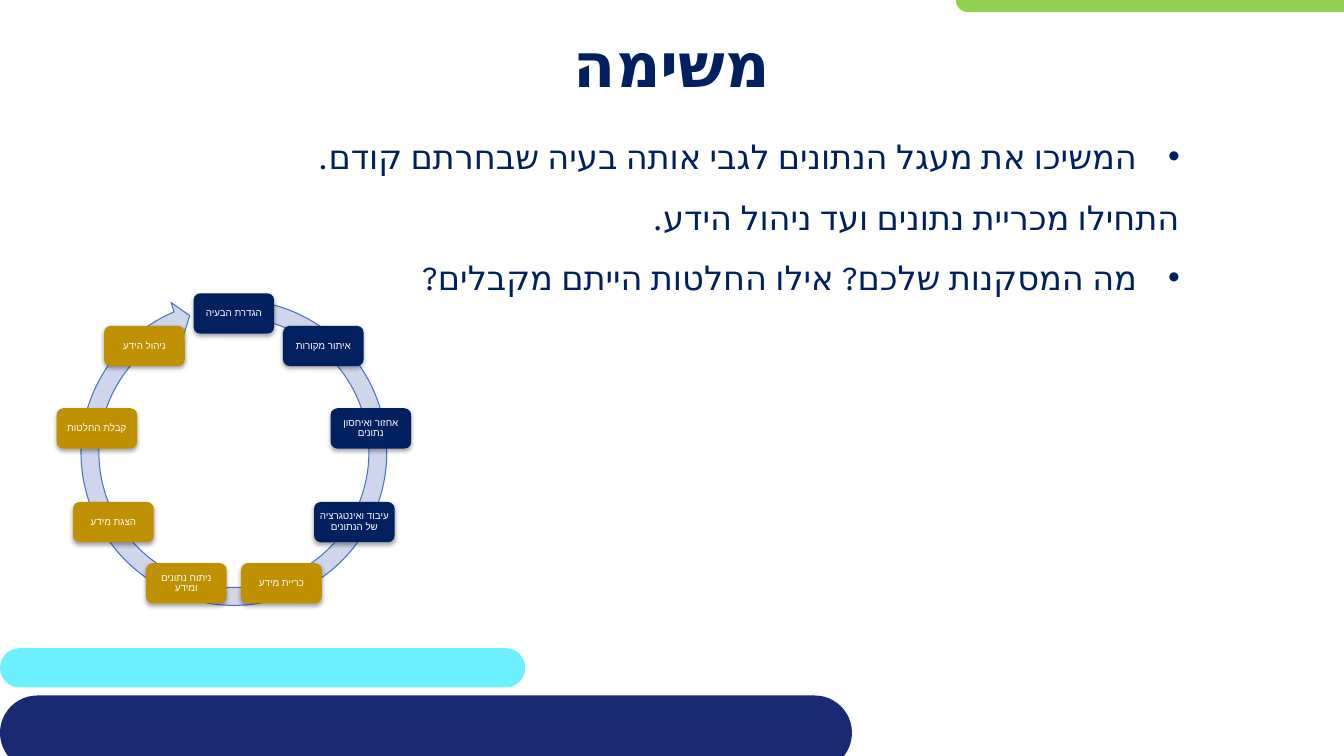
import math

import lxml.etree
import pptx
import pptx.dml.color
import pptx.enum.shapes
import pptx.enum.text
import pptx.oxml.ns
import pptx.util

Inches = pptx.util.Inches
Pt = pptx.util.Pt
SHAPE = pptx.enum.shapes.MSO_SHAPE
ALIGN = pptx.enum.text.PP_ALIGN
ANCHOR = pptx.enum.text.MSO_ANCHOR

NAVY = "002060"
GOLD = "BF9000"
WHITE = "FFFFFF"
HEADING_FONT = "League Spartan"

BARS = [
    (0, 6.43, 5.21, 0.39, "6CF0FF"),
    (9.48, -0.12, 5.8, 0.24, "92D050"),
    (0, 6.9, 8.45, 0.74, "192A72"),
]
BODY = [
    ("המשיכו את מעגל הנתונים לגבי אותה בעיה שבחרתם קודם.", True),
    ("התחילו מכריית נתונים ועד ניהול הידע.", False),
    ("מה המסקנות שלכם? אילו החלטות הייתם מקבלים?", True),
]
STAGES = [
    ("הגדרת הבעיה", NAVY),
    ("איתור מקורות", NAVY),
    ("אחזור ואיחסון נתונים", NAVY),
    ("עיבוד ואינטגרציה של הנתונים", NAVY),
    ("כריית מידע", GOLD),
    ("ניתוח נתונים ומידע", GOLD),
    ("הצגת מידע", GOLD),
    ("קבלת החלטות", GOLD),
    ("ניהול הידע", GOLD),
]
CENTER_X, CENTER_Y, RADIUS = 2.32, 4.49, 1.38
STAGE_WIDTH, STAGE_HEIGHT = 0.8, 0.4
ARROW_SIZE = 3.23


def rgb(color):
    return pptx.dml.color.RGBColor.from_string(color)


def add_child(parent, tag, **attributes):
    child = lxml.etree.SubElement(parent, pptx.oxml.ns.qn(tag))
    for name, value in attributes.items():
        child.set(name, str(value))
    return child


def add_filled_shape(shapes, kind, left, top, width, height, color):
    shape = shapes.add_shape(kind, Inches(left), Inches(top), Inches(width), Inches(height))
    shape.shadow.inherit = False
    shape.fill.solid()
    shape.fill.fore_color.rgb = rgb(color)
    shape.line.fill.background()
    return shape


def set_frame(shape, margin_x, margin_y, anchor):
    frame = shape.text_frame
    frame.word_wrap = True
    frame.margin_left = frame.margin_right = Inches(margin_x)
    frame.margin_top = frame.margin_bottom = Inches(margin_y)
    frame.vertical_anchor = anchor
    return frame


def add_text_box(slide, left, top, width, height, margin_x, margin_y, anchor):
    box = slide.shapes.add_textbox(Inches(left), Inches(top), Inches(width), Inches(height))
    return set_frame(box, margin_x, margin_y, anchor)


def write_hebrew(paragraph, text, size, font_name, color, alignment, bold=False):
    """Write one right-to-left run, naming the font for Hebrew letters too."""
    paragraph.alignment = alignment
    paragraph._p.get_or_add_pPr().set("rtl", "1")
    run = paragraph.add_run()
    run.text = text
    run.font.size = Pt(size)
    run.font.name = font_name
    run.font.bold = bold
    run.font.color.rgb = rgb(color)
    properties = run._r.get_or_add_rPr()
    properties.set("lang", "he-IL")
    add_child(properties, "a:cs", typeface=font_name)


def set_indent(paragraph, margin, indent):
    properties = paragraph._p.get_or_add_pPr()
    properties.set("marL", str(Inches(margin)))
    properties.set("indent", str(Inches(indent)))
    return properties


def add_bullet(properties, color):
    add_child(add_child(properties, "a:buClr"), "a:srgbClr", val=color)
    add_child(properties, "a:buFont", typeface="Arial")
    add_child(properties, "a:buChar", char="•")


def add_soft_shadow(shape):
    effects = shape._element.spPr.find(pptx.oxml.ns.qn("a:effectLst"))
    shadow = add_child(effects, "a:outerShdw", blurRad=Pt(3.1), dist=Pt(1.8),
                       dir=90 * 60000, rotWithShape=0)
    add_child(add_child(shadow, "a:srgbClr", val="000000"), "a:alpha", val=35000)


def add_title(slide, text):
    frame = add_text_box(slide, 0, 0.23, 13.33, 0.79, 0.04, 0, ANCHOR.MIDDLE)
    write_hebrew(frame.paragraphs[0], text, 44, HEADING_FONT, NAVY, ALIGN.CENTER, bold=True)


def add_body(slide):
    frame = add_text_box(slide, 0.56, 1.1, 11.32, 5.04, 0.1, 0.05, ANCHOR.TOP)
    for index, (text, bulleted) in enumerate(BODY):
        paragraph = frame.add_paragraph() if index else frame.paragraphs[0]
        if bulleted:
            add_bullet(set_indent(paragraph, 0.5, -0.42), NAVY)
        else:
            set_indent(paragraph, 0.08, 0)
        paragraph.line_spacing = 1.5
        write_hebrew(paragraph, text, 24, HEADING_FONT, NAVY, ALIGN.RIGHT)


def add_cycle_arrow(shapes):
    arrow = add_filled_shape(shapes, SHAPE.CIRCULAR_ARROW, CENTER_X - ARROW_SIZE / 2,
                             CENTER_Y - ARROW_SIZE / 2, ARROW_SIZE, ARROW_SIZE, "CFD5EA")
    for index, value in enumerate((0.055, 3.307, 147.988, 167.898, 0.058)):
        arrow.adjustments[index] = value
    arrow.line.color.rgb = rgb("4472C4")
    arrow.line.width = Pt(0.75)


def add_stage(shapes, angle, text, color):
    """Place a stage on the circle, with the angle measured clockwise from the top."""
    left = CENTER_X + RADIUS * math.sin(angle) - STAGE_WIDTH / 2
    top = CENTER_Y - RADIUS * math.cos(angle) - STAGE_HEIGHT / 2
    stage = add_filled_shape(shapes, SHAPE.ROUNDED_RECTANGLE, left, top,
                             STAGE_WIDTH, STAGE_HEIGHT, color)
    add_soft_shadow(stage)
    paragraph = set_frame(stage, 0.03, 0.03, ANCHOR.MIDDLE).paragraphs[0]
    paragraph.line_spacing = 0.9
    write_hebrew(paragraph, text, 7, "Arial", WHITE, ALIGN.CENTER)


def add_data_cycle(slide):
    cycle = slide.shapes.add_group_shape()
    add_cycle_arrow(cycle.shapes)
    for index, (text, color) in enumerate(STAGES):
        add_stage(cycle.shapes, 2 * math.pi * index / len(STAGES), text, color)


def main():
    presentation = pptx.Presentation()
    presentation.slide_width = Inches(13.33)
    presentation.slide_height = Inches(7.5)
    slide = presentation.slides.add_slide(presentation.slide_layouts[6])
    for left, top, width, height, color in BARS:
        bar = add_filled_shape(slide.shapes, SHAPE.ROUNDED_RECTANGLE,
                               left, top, width, height, color)
        bar.adjustments[0] = 0.5
    add_title(slide, "משימה")
    add_body(slide)
    add_data_cycle(slide)
    presentation.save("out.pptx")


if __name__ == "__main__":
    main()
